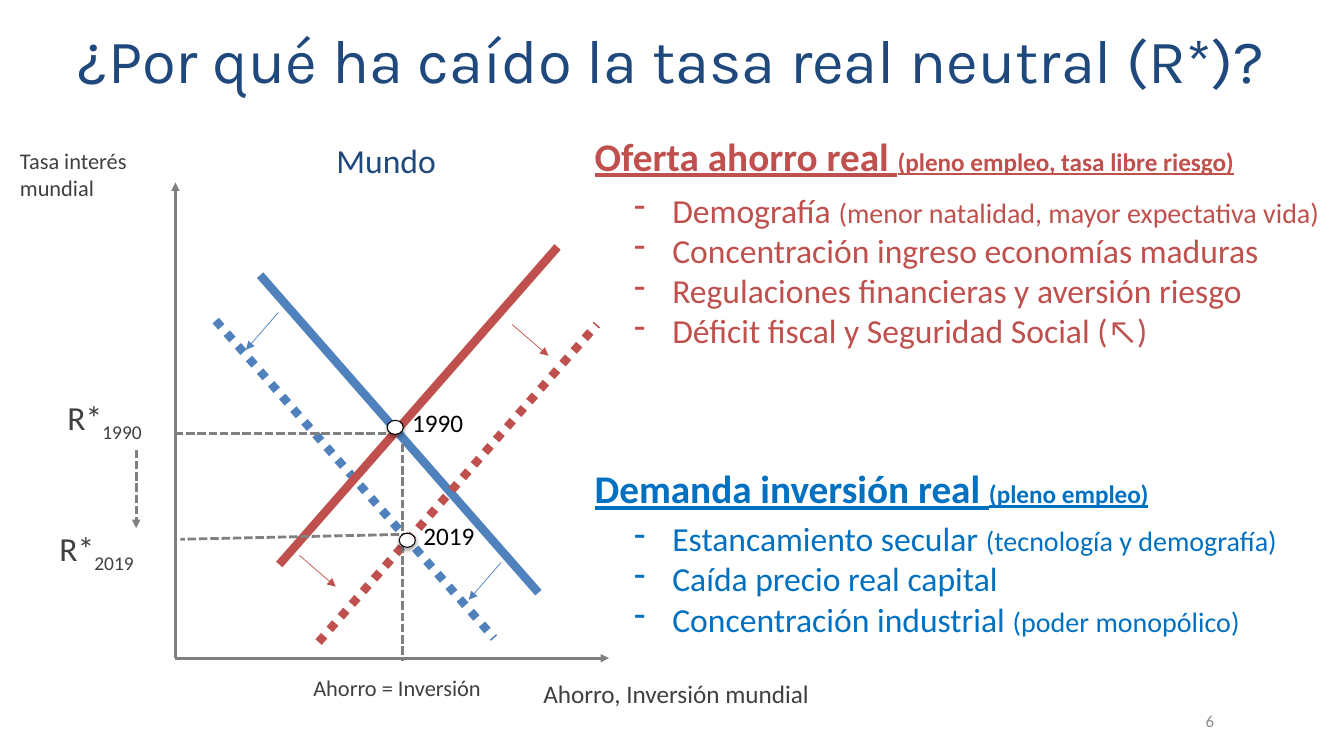
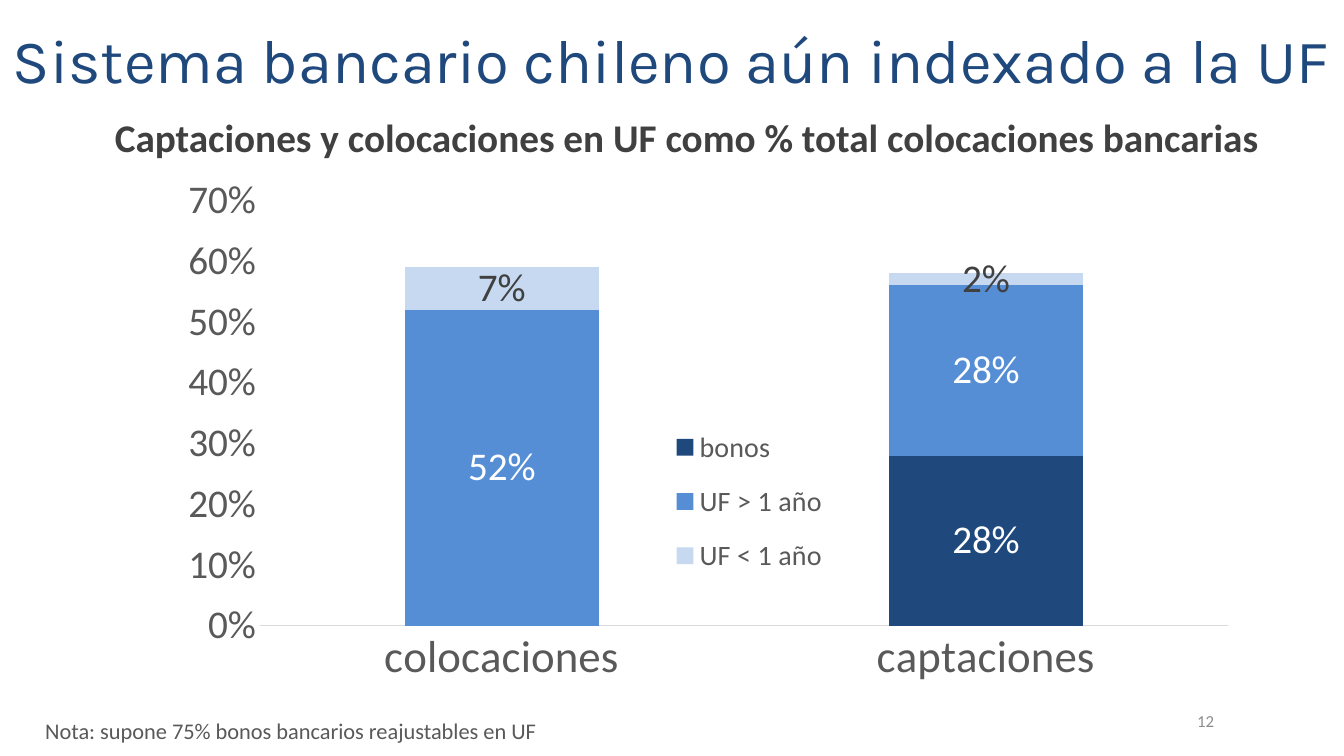
"""Builds two slides on the neutral real rate and on UF indexation in banking."""
import dataclasses

import lxml.etree
import pptx
import pptx.chart.data
import pptx.dml.color
import pptx.enum.chart
import pptx.enum.dml
import pptx.enum.shapes
import pptx.enum.text
import pptx.oxml
import pptx.oxml.ns
import pptx.util

Inches = pptx.util.Inches
Pt = pptx.util.Pt
qn = pptx.oxml.ns.qn
rgb = pptx.dml.color.RGBColor.from_string
Align = pptx.enum.text.PP_ALIGN
Anchor = pptx.enum.text.MSO_ANCHOR
AutoSize = pptx.enum.text.MSO_AUTO_SIZE
Dash = pptx.enum.dml.MSO_LINE
Shape = pptx.enum.shapes.MSO_SHAPE


@dataclasses.dataclass(frozen=True)
class Theme:
    navy: str = "1F497D"
    blue: str = "4F81BD"
    bright_blue: str = "0070C0"
    red: str = "C0504D"
    mid_blue: str = "558ED5"
    pale_blue: str = "C6D9F1"
    white: str = "FFFFFF"
    black: str = "000000"
    ink: str = "404040"
    chart_ink: str = "595959"
    axis: str = "808080"
    rule: str = "D9D9D9"
    number_ink: str = "8C8C8C"
    title_font: str = "Karla"
    body_font: str = "Calibri"
    title: int = 44
    category: int = 32
    heading: int = 28
    body: int = 24
    detail: int = 20
    label: int = 18
    note: int = 16
    number: int = 12


theme = Theme()


def write_text(box, paragraphs, size=theme.body, color=theme.ink, font=theme.body_font,
               bold=False, underline=False, align=Align.LEFT, anchor=Anchor.TOP,
               wrap=True, grow=True, bullet=None):
    """Fill a shape; each paragraph is a list of (text, size or "sub") spans or a string."""
    frame = box.text_frame
    frame.word_wrap = wrap
    frame.auto_size = AutoSize.SHAPE_TO_FIT_TEXT if grow else AutoSize.NONE
    frame.vertical_anchor = anchor
    for index, spans in enumerate(paragraphs):
        para = frame.paragraphs[0] if index == 0 else frame.add_paragraph()
        para.alignment = align
        if bullet:
            properties = para._p.get_or_add_pPr()
            properties.set("marL", str(Inches(0.38)))
            properties.set("indent", str(-Inches(0.38)))
            lxml.etree.SubElement(properties, qn("a:buChar")).set("char", bullet)
        for text, kind in [(spans, size)] if isinstance(spans, str) else spans:
            span = para.add_run()
            span.text = text
            span.font.name = font
            span.font.size = Pt(size if kind == "sub" else kind)
            span.font.bold = bold
            span.font.underline = underline
            span.font.color.rgb = rgb(color)
            if kind == "sub":
                span._r.get_or_add_rPr().set("baseline", "-25000")


def draw_line(page, start, end, color=theme.axis, width=2, dash=None, arrow=False):
    """Draw a straight connector between two points in inches."""
    line = page.shapes.add_connector(
        pptx.enum.shapes.MSO_CONNECTOR.STRAIGHT, *map(Inches, (*start, *end)))
    line.line.color.rgb = rgb(color)
    line.line.width = Pt(width)
    if dash:
        line.line.dash_style = dash
    if arrow:
        outline = line.line._get_or_add_ln()
        lxml.etree.SubElement(outline, qn("a:tailEnd")).set("type", "triangle")
    lxml.etree.SubElement(line._element.spPr, qn("a:effectLst"))


deck = pptx.Presentation()
deck.slide_width, deck.slide_height = Inches(13.33), Inches(7.5)

pages = []
for title, number in (
    ("¿Por qué ha caído la tasa real neutral (R*)?", "6"),
    ("Sistema bancario chileno aún indexado a la UF", "12"),
):
    page = deck.slides.add_slide(deck.slide_layouts.get_by_name("Title Only"))
    box = page.shapes.title
    box.left, box.top, box.width, box.height = map(Inches, (0, 0, 13.33, 1.16))
    write_text(box, [title], size=theme.title, color=theme.navy, font=theme.title_font,
               align=Align.CENTER, anchor=Anchor.MIDDLE, grow=False)
    box = page.shapes.add_textbox(*map(Inches, (9.03, 6.95, 3.11, 0.4)))
    write_text(box, [number], size=theme.number, color=theme.number_ink,
               align=Align.RIGHT, anchor=Anchor.MIDDLE, grow=False)
    pages.append(page)
rate_page, bank_page = pages

origin = (1.74, 6.53)
for tip in ((1.74, 1.81), (6.04, 6.53)):
    draw_line(rate_page, origin, tip, arrow=True)

for color, start, end, (shift_x, shift_y) in (
    (theme.blue, (2.58, 2.73), (5.34, 5.88), (-0.44, 0.45)),
    (theme.red, (2.77, 5.6), (5.53, 2.45), (0.39, 0.77)),
):
    draw_line(rate_page, start, end, color, 6)
    draw_line(rate_page, (start[0] + shift_x, start[1] + shift_y),
              (end[0] + shift_x, end[1] + shift_y), color, 6, Dash.ROUND_DOT)

for color, (step_x, step_y), starts in (
    (theme.red, (0.36, 0.31), ((5.08, 3.22), (2.97, 5.51))),
    (theme.blue, (-0.32, 0.37), ((2.76, 3.1), (4.97, 5.58))),
):
    for x, y in starts:
        draw_line(rate_page, (x, y), (x + step_x, y + step_y), color, 0.5, arrow=True)

for start, end, arrow in (
    ((3.99, 4.4), (3.99, 6.56), False),
    ((3.83, 4.3), (1.74, 4.3), False),
    ((4.07, 5.3), (1.79, 5.35), False),
    ((1.35, 4.46), (1.35, 5.24), True),
):
    draw_line(rate_page, start, end, dash=Dash.SQUARE_DOT, arrow=arrow)

for x, y in ((3.84, 4.17), (3.96, 5.29)):
    point = rate_page.shapes.add_shape(Shape.OVAL, *map(Inches, (x, y, 0.16, 0.14)))
    point.fill.solid()
    point.fill.fore_color.rgb = rgb(theme.white)
    point.line.color.rgb = rgb(theme.black)
    point.line.width = Pt(0.75)
    point.shadow.inherit = False
    effects = point._element.spPr.find(qn("a:effectLst"))
    shadow = lxml.etree.SubElement(effects, qn("a:outerShdw"))
    for name, value in (("blurRad", Pt(3.1)), ("dist", Pt(1.8)), ("dir", 90 * 60000),
                        ("rotWithShape", 0)):
        shadow.set(name, str(int(value)))
    tint = lxml.etree.SubElement(shadow, qn("a:srgbClr"))
    tint.set("val", theme.black)
    lxml.etree.SubElement(tint, qn("a:alpha")).set("val", "35000")

heading = dict(size=theme.heading, bold=True, underline=True, wrap=False)
note = dict(size=theme.note)
year = dict(size=theme.label, color=theme.black)
for at, paragraphs, style in (
    ((5.8, 1.26, 6.61, 0.57),
     [[("Oferta ahorro real ", theme.heading),
       ("(pleno empleo, tasa libre riesgo)", theme.label)]],
     dict(heading, color=theme.red)),
    ((6.19, 1.83, 7.04, 1.72),
     [[("Demografía ", theme.body),
       ("(menor natalidad, mayor expectativa vida)", theme.detail)],
      "Concentración ingreso economías maduras",
      "Regulaciones financieras y aversión riesgo",
      "Déficit fiscal y Seguridad Social (↖)"],
     dict(color=theme.red, bullet="-")),
    ((5.8, 4.56, 5.76, 0.57),
     [[("Demanda inversión real ", theme.heading), ("(pleno empleo)", theme.label)]],
     dict(heading, color=theme.bright_blue)),
    ((6.19, 5.09, 6.63, 1.31),
     [[("Estancamiento secular ", theme.body), ("(tecnología y demografía)", theme.detail)],
      "Caída precio real capital",
      [("Concentración industrial ", theme.body), ("(poder monopólico)", theme.detail)]],
     dict(color=theme.bright_blue, bullet="-", wrap=False)),
    ((0.57, 3.89, 1.09, 0.5), [[("R*", theme.body), ("1990", "sub")]], {}),
    ((0.49, 5.19, 1.25, 0.5), [[("R*", theme.body), ("2019", "sub")]], {}),
    ((0.1, 1.41, 1.7, 0.64), ["Tasa interés mundial"], note),
    ((3.01, 6.64, 2.46, 0.37), ["Ahorro = Inversión"], note),
    ((5.29, 6.68, 3.43, 0.4), ["Ahorro, Inversión mundial"], dict(size=theme.label)),
    ((2.85, 1.34, 1.96, 0.5), ["Mundo"], dict(color=theme.navy, align=Align.CENTER)),
    ((3.99, 3.99, 0.87, 0.4), ["1990"], year),
    ((4.1, 5.11, 0.87, 0.4), ["2019"], year),
):
    write_text(rate_page.shapes.add_textbox(*map(Inches, at)), paragraphs, **style)

series_rows = (
    ("bonos", (None, 0.28), theme.navy, theme.white),
    ("UF > 1 año", (0.52, 0.28), theme.mid_blue, theme.white),
    ("UF < 1 año", (0.07, 0.02), theme.pale_blue, theme.ink),
)
data = pptx.chart.data.CategoryChartData(number_format="0%")
data.categories = ["colocaciones", "captaciones"]
for name, values, fill, ink in series_rows:
    data.add_series(name, values)
chart = bank_page.shapes.add_chart(
    pptx.enum.chart.XL_CHART_TYPE.COLUMN_STACKED,
    *map(Inches, (1.25, 1.66, 11.04, 5.48)), data).chart
chart.has_title = False
chart.has_legend = True
chart.legend.position = pptx.enum.chart.XL_LEGEND_POSITION.BOTTOM
chart.legend.include_in_layout = False

plot = chart.plots[0]
plot.gap_width, plot.overlap = 150, 100
plot.vary_by_categories = False
for series, (name, values, fill, ink) in zip(plot.series, series_rows):
    series.format.fill.solid()
    series.format.fill.fore_color.rgb = rgb(fill)
    labels = series.data_labels
    labels.show_value = True
    labels.number_format, labels.number_format_is_linked = "0%", False
    labels.font.name = theme.body_font
    labels.font.size = Pt(theme.heading)
    labels.font.color.rgb = rgb(ink)

category_axis, value_axis = chart.category_axis, chart.value_axis
for font, size, color in (
    (chart.font, theme.heading, theme.black),
    (category_axis.tick_labels.font, theme.category, theme.chart_ink),
    (value_axis.tick_labels.font, theme.heading, theme.chart_ink),
    (chart.legend.font, theme.detail, theme.chart_ink),
):
    font.name = theme.body_font
    font.size = Pt(size)
    font.color.rgb = rgb(color)
for axis in (category_axis, value_axis):
    axis.major_tick_mark = pptx.enum.chart.XL_TICK_MARK.NONE
    axis.has_major_gridlines = False
category_axis.format.line.color.rgb = rgb(theme.rule)
category_axis.format.line.width = Pt(0.75)
value_axis.format.line.fill.background()
value_axis.minimum_scale, value_axis.maximum_scale, value_axis.major_unit = 0, 0.7, 0.1
value_axis.tick_labels.number_format = "0%"
value_axis.tick_labels.number_format_is_linked = False

plot_area = chart._chartSpace.chart.plotArea
for old in plot_area.findall(qn("c:layout")):
    plot_area.remove(old)
legend = chart.legend._element
for old in legend.findall(qn("c:layout")):
    legend.remove(old)
for parent, index, target, frame in (
    (plot_area, 0, "inner", (0.12, 0.06, 0.87, 0.77)),
    (legend, 1, None, (0.48, 0.44, 0.16, 0.33)),
):
    layout = lxml.etree.Element(qn("c:layout"))
    manual = lxml.etree.SubElement(layout, qn("c:manualLayout"))
    settings = [("layoutTarget", target)] if target else []
    settings += [("xMode", "edge"), ("yMode", "edge"), *zip("xywh", frame)]
    for name, value in settings:
        lxml.etree.SubElement(manual, qn("c:" + name)).set("val", str(value))
    parent.insert(index, layout)

subtitle = bank_page.shapes.add_shape(
    Shape.RECTANGLE, *map(Inches, (1.04, 1.08, 11.71, 0.57)))
subtitle.shadow.inherit = False
subtitle.fill.solid()
subtitle.fill.fore_color.rgb = rgb(theme.white)
subtitle.line.fill.background()
write_text(subtitle, ["Captaciones y colocaciones en UF como % total colocaciones bancarias"],
           size=theme.heading, bold=True)
footnote = bank_page.shapes.add_textbox(*map(Inches, (0.35, 7.07, 8, 0.37)))
write_text(footnote, ["Nota: supone 75% bonos bancarios reajustables en UF"],
           size=theme.note, color=theme.chart_ink)

deck.save("out.pptx")
